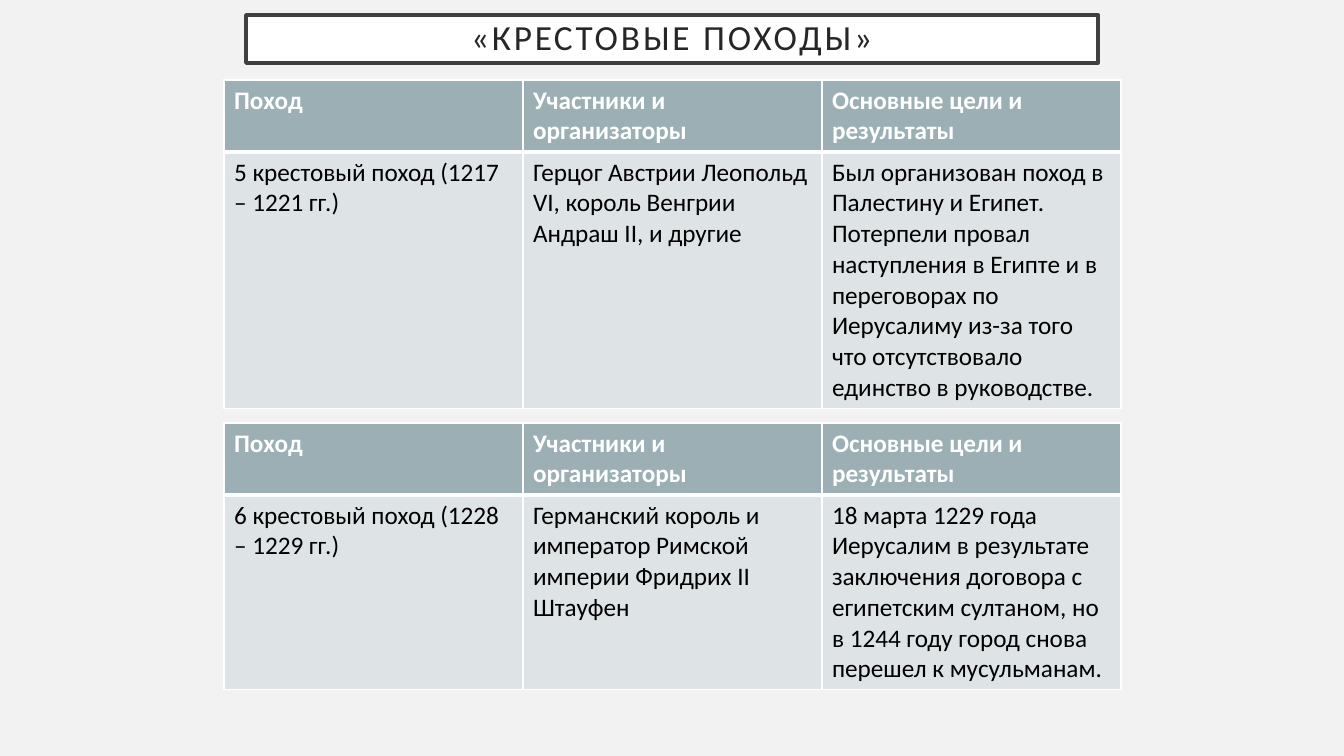
from lxml import etree
from pptx import Presentation
from pptx.dml.color import RGBColor
from pptx.enum.text import MSO_ANCHOR, PP_ALIGN
from pptx.oxml.ns import qn
from pptx.util import Pt

CENTER = PP_ALIGN.CENTER
MIDDLE = MSO_ANCHOR.MIDDLE
PX = 914400 / 100.8
FONT = "Calibri"

TITLE = "«КРЕСТОВЫЕ ПОХОДЫ»"
HEADER = ["Поход", "Участники и организаторы", "Основные цели и результаты"]
CRUSADES = [
    (80, 255, [
        "5 крестовый поход (1217 – 1221 гг.)",
        "Герцог Австрии Леопольд VI, король Венгрии Андраш II, и другие",
        "Был организован поход в Палестину и Египет. Потерпели провал "
        "наступления в Египте и в переговорах по Иерусалиму из-за того "
        "что отсутствовало единство в руководстве.",
    ]),
    (423, 194, [
        "6 крестовый поход (1228 – 1229 гг.)",
        "Германский король и император Римской империи Фридрих II Штауфен",
        "18 марта 1229 года Иерусалим в результате заключения договора с "
        "египетским султаном, но в 1244 году город снова перешел к мусульманам.",
    ]),
]
TABLE_LEFT, COL_WIDTH, HEADER_HEIGHT = 224, 299, 72
HEADER_STYLE = ("9BAFB5", "FFFFFF", True, {"L": 1, "R": 1, "T": 1, "B": 3})
BODY_STYLE = ("DEE3E5", "000000", False, {"L": 1, "R": 1, "T": 3, "B": 1})


def px(n):
    return round(n * PX)


def rgb(color):
    return RGBColor.from_string(color)


def set_font(font, size, color, bold=False):
    font.name, font.size, font.bold = FONT, Pt(size), bold
    font.color.rgb = rgb(color)


def set_borders(cell, widths):
    tcPr = cell._tc.get_or_add_tcPr()
    for i, (side, width) in enumerate(widths.items()):
        ln = etree.Element(qn("a:ln" + side), w=str(Pt(width)))
        fill = etree.SubElement(ln, qn("a:solidFill"))
        etree.SubElement(fill, qn("a:srgbClr"), val="FFFFFF")
        tcPr.insert(i, ln)


def add_title(s):
    sp = s.shapes.title
    sp.left, sp.top, sp.width, sp.height = map(px, (246, 15, 852, 48))
    sp.fill.solid()
    sp.fill.fore_color.rgb = rgb("FFFFFF")
    sp.line.color.rgb = rgb("404040")
    sp.line.width = Pt(2.5)
    tf = sp.text_frame
    tf.text = TITLE
    tf.word_wrap = True
    tf.vertical_anchor = MIDDLE
    tf.margin_left = tf.margin_right = px(20)
    tf.margin_top = tf.margin_bottom = 0
    p = tf.paragraphs[0]
    p.alignment = CENTER
    p.line_spacing = 0.9
    r = p.runs[0]
    set_font(r.font, 25.2, "262626")
    r.font._element.set("spc", "200")


def add_crusade(s, top, body_height, body):
    rows = [(HEADER, HEADER_HEIGHT, HEADER_STYLE), (body, body_height, BODY_STYLE)]
    table = s.shapes.add_table(
        len(rows), len(HEADER), px(TABLE_LEFT), px(top),
        px(COL_WIDTH * len(HEADER)), px(HEADER_HEIGHT + body_height)).table
    table.horz_banding = False
    for col in table.columns:
        col.width = px(COL_WIDTH)
    for row, (texts, height, (fill, color, bold, borders)) in zip(table.rows, rows):
        row.height = px(height)
        for cell, text in zip(row.cells, texts):
            cell.text = text
            cell.fill.solid()
            cell.fill.fore_color.rgb = rgb(fill)
            set_font(cell.text_frame.paragraphs[0].runs[0].font, 18, color, bold)
            set_borders(cell, borders)


def main():
    prs = Presentation()
    prs.slide_width, prs.slide_height = px(1344), px(756)
    s = prs.slides.add_slide(prs.slide_layouts[5])
    s.background.fill.solid()
    s.background.fill.fore_color.rgb = rgb("F2F2F2")
    add_title(s)
    for top, body_height, body in CRUSADES:
        add_crusade(s, top, body_height, body)
    prs.save("out.pptx")


if __name__ == "__main__":
    main()
